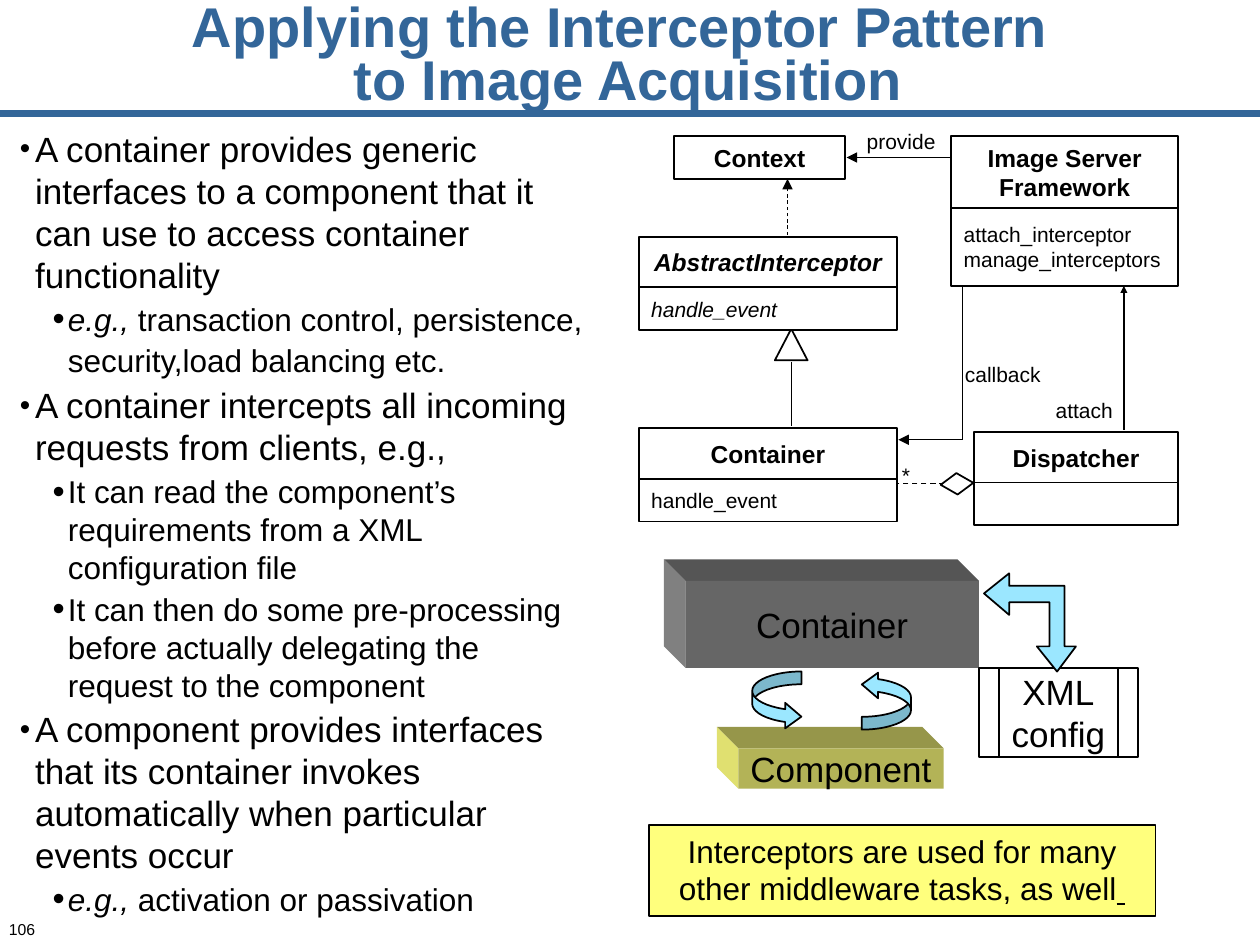
from lxml.etree import SubElement
from pptx import Presentation
from pptx.dml.color import RGBColor
from pptx.enum.dml import MSO_LINE_DASH_STYLE as Dash
from pptx.enum.shapes import MSO_CONNECTOR as Connector, MSO_SHAPE as Shape
from pptx.enum.text import MSO_ANCHOR as Anchor, MSO_AUTO_SIZE as AutoSize, PP_ALIGN as Align
from pptx.oxml.ns import qn
from pptx.util import Inches, Pt

COLORS = {
    "ink": "000000", "paper": "FFFFFF", "title": "336699", "arrow": "9BE7FF", "note": "FFFF7D",
    "gray_front": "666666", "gray_top": "555555", "gray_side": "808080",
    "olive_front": "B3B357", "olive_top": "96964A", "olive_side": "E0E070",
}


def color(name):
    return RGBColor.from_string(COLORS[name])


def write_text(shape, text, size=12, bold=False, italic=False, ink="ink", align=Align.LEFT,
               anchor=Anchor.TOP, wrap=False, inset=(0.1, 0.05), spacing=None):
    """Write text, one paragraph to a line; each line is a string or a list of (text, overrides)."""
    frame = shape.text_frame
    frame.auto_size = AutoSize.NONE
    frame.word_wrap = wrap
    frame.vertical_anchor = anchor
    frame.margin_left = frame.margin_right = Inches(inset[0])
    frame.margin_top = frame.margin_bottom = Inches(inset[1])
    lines = text.split("\n") if isinstance(text, str) else text
    for index, line in enumerate(lines):
        paragraph = frame.add_paragraph() if index else frame.paragraphs[0]
        paragraph.alignment = align
        if spacing:
            paragraph.line_spacing = spacing
        for words, changes in [(line, {})] if isinstance(line, str) else line:
            # A vertical tab in the words is a line break
            for part_index, part in enumerate(words.split("\v")):
                if part_index:
                    paragraph.add_line_break()
                run = paragraph.add_run()
                run.text = part
                font = run.font
                font.name = "Arial"
                font.size = Pt(changes.get("size", size))
                font.bold = bold
                font.italic = changes.get("italic", italic)
                font.underline = changes.get("underline")
                font.color.rgb = color(ink)
    return frame


def paint(shape, fill, outline=True):
    shape.shadow.inherit = False
    shape.fill.solid()
    shape.fill.fore_color.rgb = color(fill)
    if outline:
        shape.line.color.rgb = color("ink")
        shape.line.width = Pt(1)
    else:
        shape.line.fill.background()
    return shape


def add_block(slide, kind, box, fill="paper", outline=True):
    return paint(slide.shapes.add_shape(kind, *map(Inches, box)), fill, outline)


def add_outline(slide, points, fill, outline=True):
    corners = [(Inches(x), Inches(y)) for x, y in points]
    builder = slide.shapes.build_freeform(*corners[0])
    builder.add_line_segments(corners[1:], close=True)
    return paint(builder.convert_to_shape(), fill, outline)


def add_label(slide, box, text, **text_format):
    return write_text(slide.shapes.add_textbox(*map(Inches, box)), text, **text_format)


def add_line(slide, start, end, width=0.75, ink="ink", dashed=False, head=None):
    line = slide.shapes.add_connector(Connector.STRAIGHT, *map(Inches, (*start, *end)))
    line.line.color.rgb = color(ink)
    line.line.width = Pt(width)
    if dashed:
        line.line.dash_style = Dash.DASH
    if head:
        SubElement(line.line._get_or_add_ln(), qn("a:tailEnd"), type="triangle", w=head, len=head)
    SubElement(line._element.spPr, qn("a:effectLst"))


def add_heading(slide, box):
    add_line(slide, (0, 0.9), (10, 0.9), width=3.75, ink="title")
    title = slide.shapes.title
    title.left, title.top, title.width, title.height = map(Inches, box)
    write_text(title, "Applying the Interceptor Pattern \vto Image Acquisition", size=32, bold=True,
               ink="title", align=Align.CENTER, anchor=Anchor.MIDDLE, wrap=True, spacing=0.8)


def add_bullets(slide, box):
    eg = ("e.g.,", {"size": 18, "italic": True})
    sub = {"size": 18}
    # Level and runs of each paragraph
    points = [
        (0, [("A container provides generic interfaces to a component that it can use "
              "to access container functionality", {})]),
        (1, [eg, (" transaction control, persistence, security,load balancing etc.", sub), (" ", {})]),
        (0, [("A container intercepts all incoming requests from clients, e.g.,", {})]),
        (1, [("It can read the component’s requirements from a XML configuration file", sub)]),
        (1, [("It can then do some pre-processing before actually delegating the request "
              "to the component", sub)]),
        (0, [("A component provides interfaces that its container invokes automatically "
              "when particular events occur", {})]),
        (1, [eg, (" activation or passivation", sub)]),
    ]
    frame = add_label(slide, box, [runs for _, runs in points], size=20, wrap=True)
    for index, (paragraph, (level, _)) in enumerate(zip(frame.paragraphs, points)):
        paragraph.level = level
        paragraph.space_before = Pt(2.5 if index else 0)
        properties = paragraph._p.get_or_add_pPr()
        properties.set("marL", str(Inches((0.12, 0.38)[level])))
        properties.set("indent", str(Inches(-0.12)))
        SubElement(properties, qn("a:buSzPct"), val=("85000", "110000")[level])
        SubElement(properties, qn("a:buFont"), typeface="Arial")
        SubElement(properties, qn("a:buChar"), char="•")


def add_class(slide, box, name, members="", name_height=0.4, italic=False):
    left, top, width, height = box
    name_cell = add_block(slide, Shape.RECTANGLE, (left, top, width, name_height))
    write_text(name_cell, name, size=14, bold=True, italic=italic,
               align=Align.CENTER, anchor=Anchor.MIDDLE)
    if height > name_height:
        cell = add_block(slide, Shape.RECTANGLE, (left, top + name_height, width, height - name_height))
        if members:
            write_text(cell, members, italic=italic, anchor=Anchor.MIDDLE)


def add_class_diagram(slide, box):
    left, top, width, _ = box
    right = left + width
    # Relations
    add_line(slide, (7.55, 1.25), (6.72, 1.25), head="med")
    add_line(slide, (6.25, 2.61), (6.25, 1.42), width=0.5, dashed=True, head="med")
    add_line(slide, (6.28, 2.87), (6.28, 3.38))
    add_line(slide, (7.64, 1.55), (7.64, 3.49))
    add_line(slide, (7.64, 3.49), (7.13, 3.49), head="med")
    add_line(slide, (7.64, 3.84), (7.13, 3.84), dashed=True)
    add_line(slide, (8.92, 3.41), (8.92, 2.27), head="sm")
    add_block(slide, Shape.ISOSCELES_TRIANGLE, (6.15, 2.61, 0.26, 0.25))
    add_block(slide, Shape.FLOWCHART_DECISION, (7.51, 3.71, 0.17, 0.26)).rotation = 86.5
    # Classes
    add_class(slide, (5.35, top, 1.36, 0.34), "Context", name_height=0.34)
    add_class(slide, (right - 1.8, top, 1.8, 1.19), "Image Server\nFramework",
              "attach_interceptor\nmanage_interceptors", name_height=0.57)
    add_class(slide, (left, 1.88, 2.05, 0.74), "AbstractInterceptor", "handle_event", italic=True)
    add_class(slide, (left, 3.4, 2.05, 0.74), "Container", "handle_event")
    add_class(slide, (right - 1.62, 3.43, 1.62, 0.74), "Dispatcher")
    # Relation names
    for x, y, length, name in [(6.78, 0.97, 0.75, "provide"), (7.56, 2.82, 0.8, "callback"),
                               (8.28, 3.11, 0.65, "attach"), (7.06, 3.62, 0.27, "*")]:
        add_label(slide, (x, y, length, 0.3), name)


def add_slab(slide, box, text, tone, depth=0.17):
    """A solid slab whose front fills the box, with its depth going up and to the left."""
    left, top, width, height = box
    right, bottom = left + width, top + height
    back_left, back_top = left - depth, top - depth
    add_outline(slide, [(back_left, back_top), (right - depth, back_top), (right, top), (left, top)],
                tone + "_top", outline=False)
    add_outline(slide, [(back_left, back_top), (left, top), (left, bottom), (back_left, bottom - depth)],
                tone + "_side", outline=False)
    front = add_block(slide, Shape.RECTANGLE, box, tone + "_front", outline=False)
    write_text(front, text, size=20, align=Align.CENTER, anchor=Anchor.MIDDLE)


def add_container_sketch(slide, box):
    left, top, width, height = box
    add_slab(slide, (left, top, width, 0.69), "Container", "gray")
    add_slab(slide, (5.86, top + height - 0.32, 1.63, 0.32), "Component", "olive")
    # Calls between container and component
    for x, turn in [(5.97, 0), (6.84, 180)]:
        cycle = add_block(slide, Shape.CURVED_RIGHT_ARROW, (x, 5.33, 0.39, 0.46), "arrow")
        cycle.rotation = turn
        for index, value in enumerate((0.26, 0.52, 0.33)):
            cycle.adjustments[index] = value
    # Configuration file and its two-way arrow
    config = add_block(slide, Shape.FLOWCHART_PREDEFINED_PROCESS, (left + width, 5.3, 1.26, 0.71))
    write_text(config, "XML\nconfig", size=20, align=Align.CENTER, anchor=Anchor.MIDDLE)
    add_outline(slide, [(7.81, 4.71), (8.01, 4.88), (8.01, 4.78), (8.33, 4.78), (8.33, 5.13),
                        (8.23, 5.13), (8.39, 5.33), (8.54, 5.13), (8.45, 5.13), (8.45, 4.65),
                        (8.01, 4.65), (8.01, 4.55)], "arrow")


def add_conclusion(slide, box):
    note = add_block(slide, Shape.RECTANGLE, box, "note")
    write_text(note, [[("Interceptors are used for many other middleware tasks, as well", {}),
                       (" ", {"underline": True})]], size=18, align=Align.CENTER, wrap=True)


def main():
    deck = Presentation()
    deck.slide_width, deck.slide_height = Inches(10), Inches(7.5)
    slide = deck.slides.add_slide(deck.slide_layouts[5])
    add_heading(slide, (0.65, -0.04, 8.67, 1))
    add_bullets(slide, (0.06, 0.96, 4.69, 6.45))
    add_class_diagram(slide, (5.07, 1.08, 4.28, 3.09))
    add_container_sketch(slide, (5.44, 4.61, 2.33, 1.65))
    add_conclusion(slide, (5.15, 6.55, 4.02, 0.72))
    # Page number
    add_label(slide, (0, 7.32, 0.28, 0.13), "106", size=9, align=Align.RIGHT, inset=(0, 0), spacing=0.9)
    deck.save("out.pptx")


if __name__ == "__main__":
    main()
